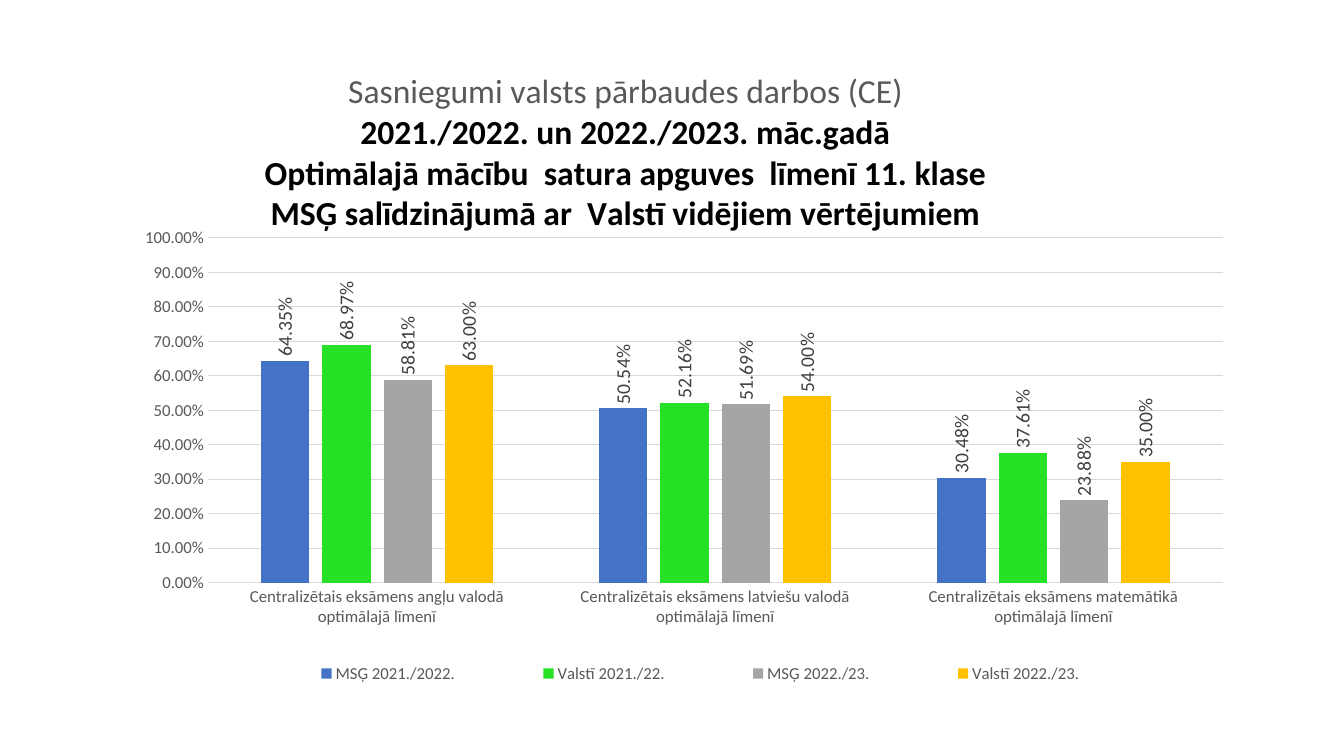
from lxml import etree
from pptx import Presentation
from pptx.chart.data import CategoryChartData
from pptx.dml.color import RGBColor
from pptx.enum.chart import (XL_CHART_TYPE, XL_LABEL_POSITION,
                             XL_LEGEND_POSITION, XL_TICK_MARK)
from pptx.enum.text import PP_ALIGN
from pptx.oxml.ns import qn
from pptx.util import Cm, Pt

COLUMNS = XL_CHART_TYPE.COLUMN_CLUSTERED
OUTSIDE = XL_LABEL_POSITION.OUTSIDE_END
RIGHT = XL_LEGEND_POSITION.RIGHT
NO_TICK = XL_TICK_MARK.NONE
CENTER = PP_ALIGN.CENTER

FONT = "Calibri"
PERCENT = "0.00%"
COLORS = {"black": "000000", "label": "404040", "text": "595959",
          "grid": "D9D9D9", "blue": "4472C4", "green": "27E127",
          "gray": "A5A5A5", "gold": "FFC000"}

TITLE = ["Sasniegumi valsts pārbaudes darbos (CE)",
         "2021./2022. un 2022./2023. māc.gadā",
         "Optimālajā mācību  satura apguves  līmenī 11. klase",
         "MSĢ salīdzinājumā ar  Valstī vidējiem vērtējumiem"]
EXAMS = [f"Centralizētais eksāmens {subject} optimālajā līmenī"
         for subject in ("angļu valodā", "latviešu valodā", "matemātikā")]
SERIES = [("MSĢ 2021./2022.", "blue", (0.6435, 0.5054, 0.3048)),
          ("Valstī 2021./22.", "green", (0.6897, 0.5216, 0.3761)),
          ("MSĢ 2022./23.", "gray", (0.5881, 0.5169, 0.2388)),
          ("Valstī 2022./23.", "gold", (0.63, 0.54, 0.35))]


def rgb(name):
    return RGBColor.from_string(COLORS[name])


def set_font(font, size, color, bold=False):
    font.name, font.size, font.bold = FONT, Pt(size), bold
    font.color.rgb = rgb(color)


def set_line(line):
    line.color.rgb = rgb("grid")
    line.width = Pt(0.75)


def place(part, index, **box):
    """Set a manual layout, in fractions of the chart, as child number index."""
    old = part.find(qn("c:layout"))
    if old is not None:
        part.remove(old)
    layout = etree.Element(qn("c:layout"))
    manual = etree.SubElement(layout, qn("c:manualLayout"))
    if "w" in box:
        if part.tag == qn("c:plotArea"):
            etree.SubElement(manual, qn("c:layoutTarget")).set("val", "inner")
    for mode in ("xMode", "yMode"):
        etree.SubElement(manual, qn(f"c:{mode}")).set("val", "edge")
    for key, value in box.items():
        etree.SubElement(manual, qn(f"c:{key}")).set("val", str(value))
    part.insert(index, layout)


def add_title(chart):
    frame = chart.chart_title.text_frame
    for i, text in enumerate(TITLE):
        para = frame.add_paragraph() if i else frame.paragraphs[0]
        para.text = text
        para.alignment = CENTER
        set_font(para.font, 24, "black" if i else "text", bold=i > 0)
        set_font(para.runs[0].font, 24, "black" if i else "text", bold=i > 0)
    chart.chart_title.include_in_layout = False
    place(chart.chart_title._element, 1, x=0.14, y=0.02)


def style_axes(chart):
    for axis in (chart.category_axis, chart.value_axis):
        axis.major_tick_mark = axis.minor_tick_mark = NO_TICK
        set_font(axis.tick_labels.font, 12, "text")
    set_line(chart.category_axis.format.line)
    values = chart.value_axis
    values.minimum_scale, values.maximum_scale = 0, 1
    values.major_unit = 0.1
    values.format.line.fill.background()
    set_line(values.major_gridlines.format.line)
    values.tick_labels.number_format = PERCENT
    values.tick_labels.number_format_is_linked = False


def style_bars(plot):
    plot.gap_width, plot.overlap = 219, -27
    plot.vary_by_categories = False
    for bars, (_, color, _) in zip(plot.series, SERIES):
        bars.format.fill.solid()
        bars.format.fill.fore_color.rgb = rgb(color)
        labels = bars.data_labels
        labels.show_value = True
        labels.position = OUTSIDE
        labels.number_format = PERCENT
        labels.number_format_is_linked = False
        set_font(labels.font, 14, "label")
        body = labels._element.find(".//" + qn("a:bodyPr"))
        body.set("rot", "-5400000")
        body.set("vert", "horz")


def add_legend(chart):
    chart.has_legend = True
    legend = chart.legend
    legend.position = RIGHT
    legend.include_in_layout = False
    set_font(legend.font, 12, "text")
    place(legend._element, 1, x=0.12, y=0.93, w=0.81, h=0.05)


def add_columns(slide):
    data = CategoryChartData(number_format=PERCENT)
    data.categories = EXAMS
    for name, _, values in SERIES:
        data.add_series(name, values)
    chart = slide.shapes.add_chart(COLUMNS, Cm(2.57), Cm(1.35), Cm(28.73),
                                   Cm(16.36), data).chart
    set_font(chart.font, 10, "black")
    add_title(chart)
    style_axes(chart)
    style_bars(chart.plots[0])
    add_legend(chart)
    area = chart._chartSpace.find(".//" + qn("c:plotArea"))
    place(area, 0, x=0.093, y=0.284, w=0.89, h=0.531)


def main():
    deck = Presentation()
    deck.slide_width, deck.slide_height = Cm(33.87), Cm(19.05)
    blank = deck.slide_layouts[6]
    add_columns(deck.slides.add_slide(blank))
    deck.save("out.pptx")


if __name__ == "__main__":
    main()
